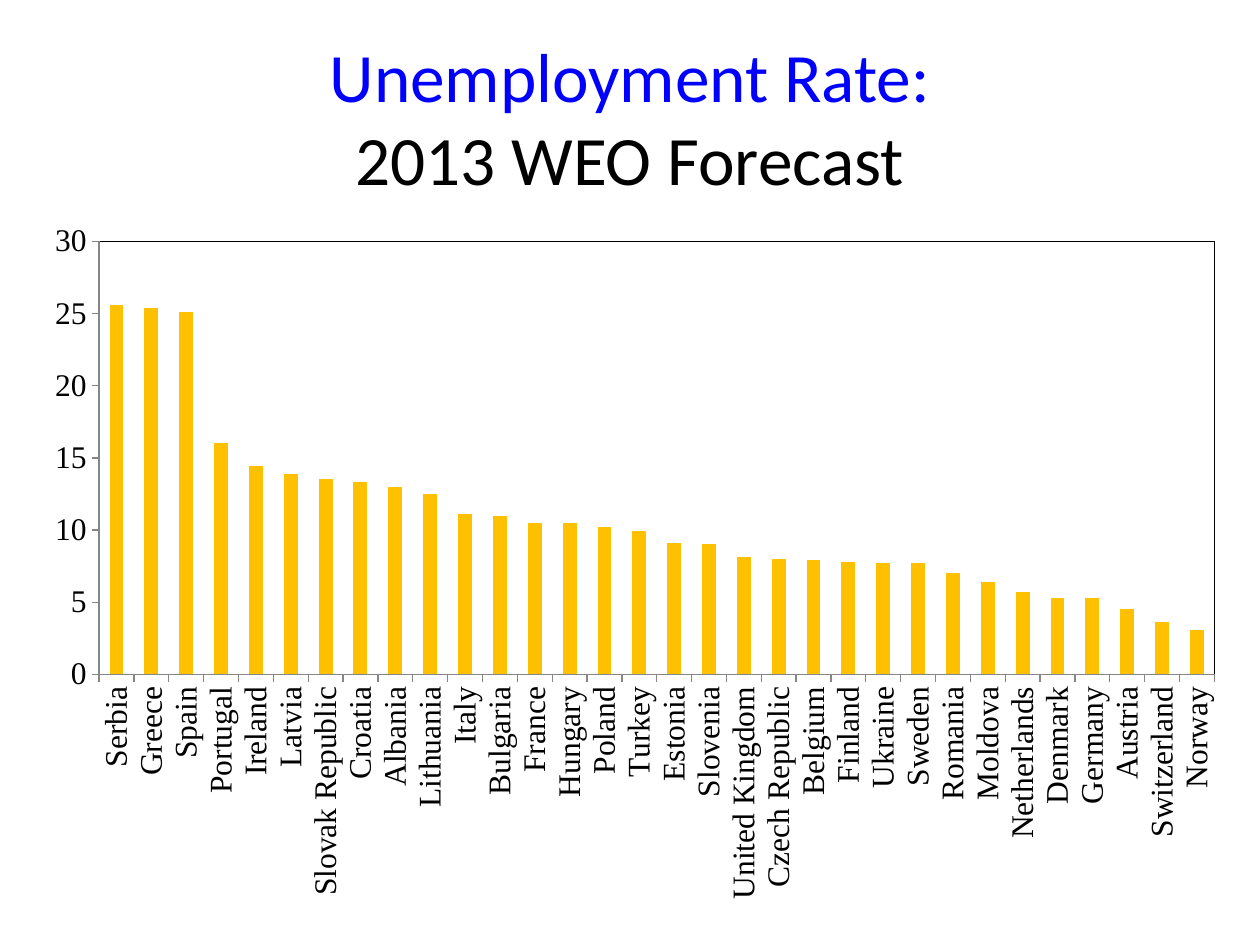
from dataclasses import dataclass

from lxml import etree
from pptx import Presentation
from pptx.chart.data import CategoryChartData as ChartData
from pptx.dml.color import RGBColor as RGB
from pptx.enum.chart import XL_CHART_TYPE as Kind, XL_TICK_MARK as Tick
from pptx.enum.text import MSO_ANCHOR as Anchor, PP_ALIGN as Align
from pptx.oxml import parse_xml
from pptx.oxml.ns import nsdecls, qn
from pptx.util import Inches, Pt


@dataclass(frozen=True)
class Theme:
    blue: str = "0000FF"
    black: str = "000000"
    gold: str = "FFC000"
    gray: str = "868686"
    head: str = "Calibri"
    body: str = "Times New Roman"
    large: float = 39.6
    small: float = 18


THEME = Theme()

RATES = {
    "Serbia": 25.6, "Greece": 25.4, "Spain": 25.1, "Portugal": 16,
    "Ireland": 14.4, "Latvia": 13.9, "Slovak Republic": 13.5,
    "Croatia": 13.3, "Albania": 13, "Lithuania": 12.5, "Italy": 11.1,
    "Bulgaria": 11, "France": 10.5, "Hungary": 10.5, "Poland": 10.2,
    "Turkey": 9.9, "Estonia": 9.1, "Slovenia": 9, "United Kingdom": 8.1,
    "Czech Republic": 8, "Belgium": 7.9, "Finland": 7.8, "Ukraine": 7.7,
    "Sweden": 7.7, "Romania": 7, "Moldova": 6.4, "Netherlands": 5.7,
    "Denmark": 5.3, "Germany": 5.3, "Austria": 4.5, "Switzerland": 3.6,
    "Norway": 3.1,
}


def style(font, name, size, color):
    font.name = name
    font.size = Pt(size)
    font.color.rgb = RGB.from_string(color)


def add_title(slide, box):
    frame = slide.shapes.add_textbox(*map(Inches, box)).text_frame
    frame.word_wrap = True
    frame.vertical_anchor = Anchor.MIDDLE
    para = frame.paragraphs[0]
    para.alignment = Align.CENTER
    lines = [("Unemployment Rate:", THEME.blue),
             ("2013 WEO Forecast", THEME.black)]
    for i, (text, color) in enumerate(lines):
        if i:
            para.add_line_break()
        run = para.add_run()
        run.text = text
        style(run.font, THEME.head, THEME.large, color)


def frame_plot(chart, area):
    """Fix the inner plot area, in shares of the chart, and outline it."""
    plot = chart.element.find(".//" + qn("c:plotArea"))
    for old in plot.findall(qn("c:layout")):
        plot.remove(old)
    layout = etree.Element(qn("c:layout"))
    manual = etree.SubElement(layout, qn("c:manualLayout"))
    parts = [("layoutTarget", "inner"), ("xMode", "edge"), ("yMode", "edge")]
    for tag, val in parts + list(zip("xywh", area)):
        etree.SubElement(manual, qn("c:" + tag)).set("val", str(val))
    plot.insert(0, layout)
    plot.append(parse_xml(
        f'<c:spPr {nsdecls("c", "a")}><a:noFill/><a:ln w="9525"><a:solidFill>'
        f'<a:srgbClr val="{THEME.black}"/></a:solidFill></a:ln></c:spPr>'))


def add_rates(slide, box):
    data = ChartData()
    data.categories = list(RATES)
    data.add_series("Series 1", list(RATES.values()))
    chart = slide.shapes.add_chart(
        Kind.COLUMN_CLUSTERED, *map(Inches, box), data).chart
    chart.has_title = chart.has_legend = False
    style(chart.font, THEME.body, THEME.small, THEME.black)

    # Columns
    plot = chart.plots[0]
    plot.gap_width = 150
    plot.vary_by_categories = False
    fill = plot.series[0].format.fill
    fill.solid()
    fill.fore_color.rgb = RGB.from_string(THEME.gold)

    # Axes
    cat, val = chart.category_axis, chart.value_axis
    for axis in (cat, val):
        axis.has_major_gridlines = False
        axis.major_tick_mark = Tick.OUTSIDE
        axis.minor_tick_mark = Tick.NONE
        axis.format.line.color.rgb = RGB.from_string(THEME.gray)
        axis.format.line.width = Pt(0.75)
        style(axis.tick_labels.font, THEME.body, THEME.small, THEME.black)
    val.minimum_scale, val.maximum_scale, val.major_unit = 0, 30, 5

    # Every country name, turned upright
    names = chart.element.find(".//" + qn("c:catAx"))
    turn = names.find(".//" + qn("a:bodyPr"))
    turn.set("rot", "-5400000")
    turn.set("vert", "horz")
    frame_plot(chart, (0.056, 0.044, 0.924, 0.616))


def main():
    deck = Presentation()
    deck.slide_width, deck.slide_height = Inches(10), Inches(7.5)
    slide = deck.slides.add_slide(deck.slide_layouts[6])
    add_title(slide, (0.5, 0.3, 9, 1.25))
    add_rates(slide, (0.25, 1.67, 9.58, 5.58))
    deck.save("out.pptx")


if __name__ == "__main__":
    main()
